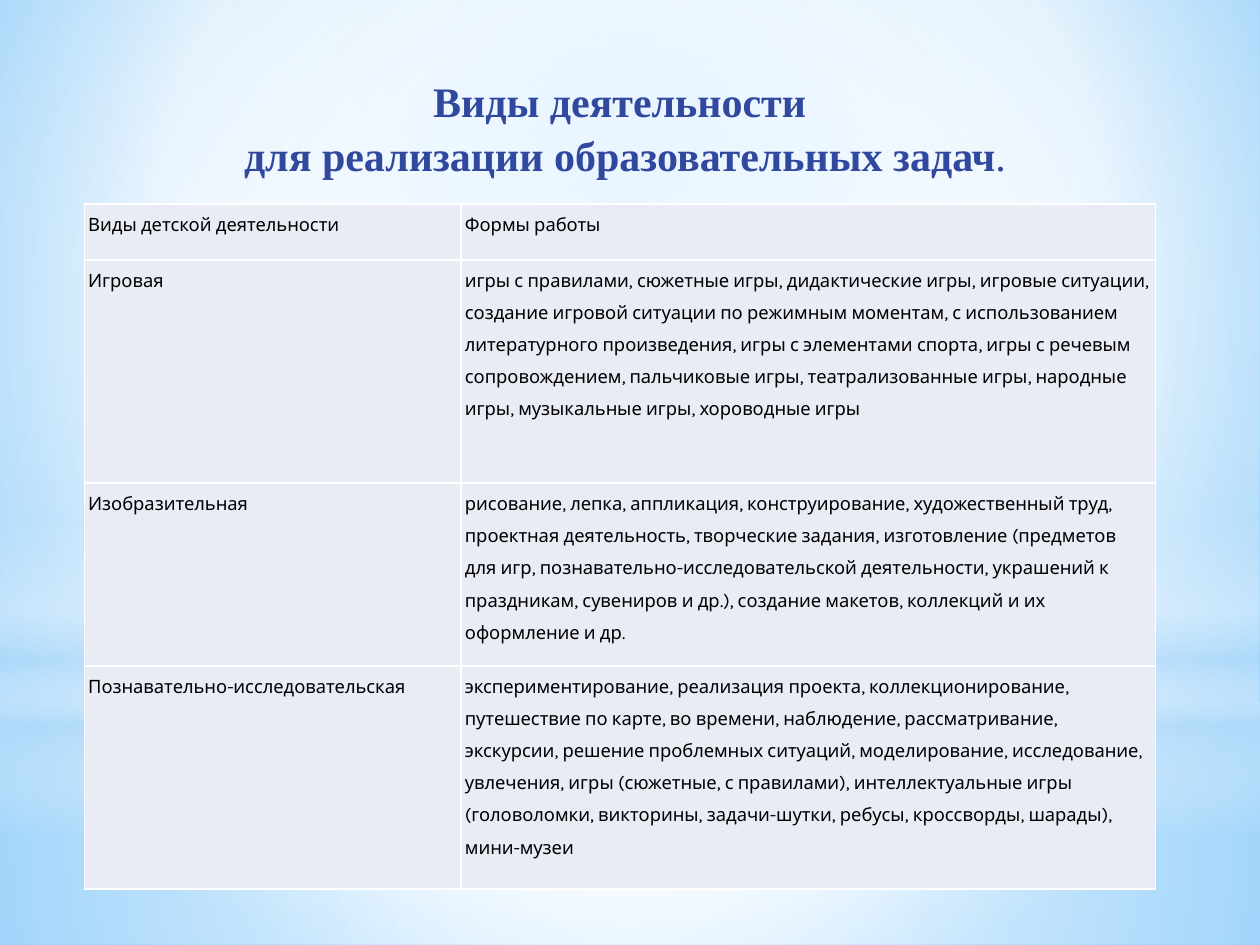
import pptx
import pptx.util
import pptx.oxml
import pptx.dml.color
import pptx.enum.shapes
import pptx.enum.text
from pptx.oxml.ns import nsdecls, qn

Pt = pptx.util.Pt
SHAPE = pptx.enum.shapes.MSO_SHAPE

WIDTH, HEIGHT = 720, 540
CIRCLE = '<a:path path="circle"><a:fillToRect l="{}" t="{}" r="{}" b="{}"/></a:path>'
CENTRE = CIRCLE.format(50000, 50000, 50000, 50000)
BACKDROP = CIRCLE.format(20000, 10000, 20000, 60000)
DOWNWARD = '<a:lin ang="5400000" scaled="0"/>'

TITLE = ["Виды деятельности ", "для реализации образовательных задач"]
COLUMNS = [215.3, 396.7]
ROW_HEIGHTS = [31.9, 127.6, 104.4, 127.6]
ROWS = [
    ("Виды детской деятельности", "Формы работы"),
    ("Игровая",
     "игры с правилами, сюжетные игры, дидактические игры, игровые ситуации, "
     "создание игровой ситуации по режимным моментам, с использованием "
     "литературного произведения, игры с элементами спорта, игры с речевым "
     "сопровождением, пальчиковые игры, театрализованные игры, народные игры, "
     "музыкальные игры, хороводные игры"),
    ("Изобразительная",
     "рисование, лепка, аппликация, конструирование, художественный труд, "
     "проектная деятельность, творческие задания, изготовление (предметов для игр, "
     "познавательно-исследовательской деятельности, украшений к праздникам, "
     "сувениров и др.), создание макетов, коллекций и их оформление и др."),
    ("Познавательно-исследовательская",
     "экспериментирование, реализация проекта, коллекционирование, путешествие по "
     "карте, во времени, наблюдение, рассматривание, экскурсии, решение проблемных "
     "ситуаций, моделирование, исследование, увлечения, игры (сюжетные, с "
     "правилами), интеллектуальные игры (головоломки, викторины, задачи-шутки, "
     "ребусы, кроссворды, шарады), мини-музеи"),
]


def rgb(value):
    """Return the colour for a hex string."""
    return pptx.dml.color.RGBColor.from_string(value)


def set_gradient(parent, stops, direction):
    """Replace the solid fill in parent by stops of position, colour and opacity."""
    marks = "".join(
        f'<a:gs pos="{pos * 1000}"><a:srgbClr val="{color}">'
        f'<a:alpha val="{alpha * 1000}"/></a:srgbClr></a:gs>'
        for pos, color, alpha in stops)
    grad = pptx.oxml.parse_xml(
        f'<a:gradFill {nsdecls("a")} rotWithShape="1">'
        f'<a:gsLst>{marks}</a:gsLst>{direction}</a:gradFill>')
    parent.replace(parent.find(qn("a:solidFill")), grad)


def add_glow(s, kind, box, stops, direction=CENTRE):
    """Add a borderless shape with a gradient fill."""
    sp = s.shapes.add_shape(kind, *map(Pt, box))
    sp.shadow.inherit = False
    sp.line.fill.background()
    sp.fill.solid()
    set_gradient(sp._element.spPr, stops, direction)


def add_backdrop(s, width, height):
    """Paint the slide background and the layers of light over it."""
    s.background.fill.solid()
    bg = s._element.find(".//" + qn("p:bgPr"))
    set_gradient(bg, [(0, "9ED5FF", 100), (60, "FFFFFF", 100), (100, "5BB9FF", 100)],
                 BACKDROP)
    horizon = 401.8
    add_glow(s, SHAPE.RECTANGLE, (0, horizon, width, height - horizon),
             [(0, "FFFFFF", 91), (37, "FFFFFF", 76), (100, "B4DCFA", 79)])
    add_glow(s, SHAPE.RECTANGLE, (0, 0, width, horizon),
             [(0, "FFFFFF", 89), (48, "FFFFFF", 62), (100, "B4DCFA", 79)])
    add_glow(s, SHAPE.RECTANGLE, (0, 296.6, width, 180),
             [(0, "FFFFFF", 0), (29, "FFFFFF", 30), (45, "B4DCFA", 40),
              (55, "FFFFFF", 26), (65, "B4DCFA", 60), (100, "FFFFFF", 0)], DOWNWARD)
    add_glow(s, SHAPE.OVAL, (0, 126, width, horizon),
             [(0, "FFFFFF", 100), (56, "FFFFFF", 0)])


def add_title(s, left, top, width, height):
    """Place the two-line title in front of the backdrop."""
    sp = s.shapes.title
    s.shapes._spTree.append(sp._element)
    sp.left, sp.top, sp.width, sp.height = map(Pt, (left, top, width, height))
    tf = sp.text_frame
    tf.word_wrap = True
    tf.vertical_anchor = pptx.enum.text.MSO_ANCHOR.TOP
    tf.text = "\n".join(TITLE)
    for p in tf.paragraphs:
        p.alignment = pptx.enum.text.PP_ALIGN.CENTER
        p.line_spacing = 1.07
        p.font.name, p.font.size, p.font.bold = "Times New Roman", Pt(24), True
        p.font.color.rgb = rgb("31489F")
    r = tf.paragraphs[-1].add_run()
    r.text = "."
    r.font.bold = False


def set_borders(cell, color, width):
    """Draw the four borders of a cell."""
    tc_pr = cell._tc.get_or_add_tcPr()
    for i, side in enumerate(("lnL", "lnR", "lnT", "lnB")):
        tc_pr.insert(i, pptx.oxml.parse_xml(
            f'<a:{side} {nsdecls("a")} w="{Pt(width)}"><a:solidFill>'
            f'<a:srgbClr val="{color}"/></a:solidFill></a:{side}>'))


def add_activities(s, left, top):
    """Add the table of activities and forms of work."""
    box = (left, top, sum(COLUMNS), sum(ROW_HEIGHTS))
    table = s.shapes.add_table(len(ROWS), len(COLUMNS), *map(Pt, box)).table
    table.first_row = table.horz_banding = False
    for column, width in zip(table.columns, COLUMNS):
        column.width = Pt(width)
    for row, height, texts in zip(table.rows, ROW_HEIGHTS, ROWS):
        row.height = Pt(height)
        for cell, text in zip(row.cells, texts):
            cell.text = text
            cell.margin_left = cell.margin_right = Pt(2.2)
            cell.margin_top = cell.margin_bottom = 0
            cell.fill.solid()
            cell.fill.fore_color.rgb = rgb("E9EBF5")
            set_borders(cell, "FFFFFF", 1)
            p = cell.text_frame.paragraphs[0]
            p.line_spacing = 1.5
            p.font.name, p.font.size = "Karla", Pt(10.5)
            p.font.color.rgb = rgb("000000")


def main():
    """Build the slide and save it."""
    prs = pptx.Presentation()
    prs.slide_width, prs.slide_height = Pt(WIDTH), Pt(HEIGHT)
    s = prs.slides.add_slide(prs.slide_layouts[5])
    add_backdrop(s, WIDTH, HEIGHT)
    add_title(s, 36.7, 37.4, 640.8, 65.5)
    add_activities(s, 48.2, 116.6)
    prs.save("out.pptx")


if __name__ == "__main__":
    main()
